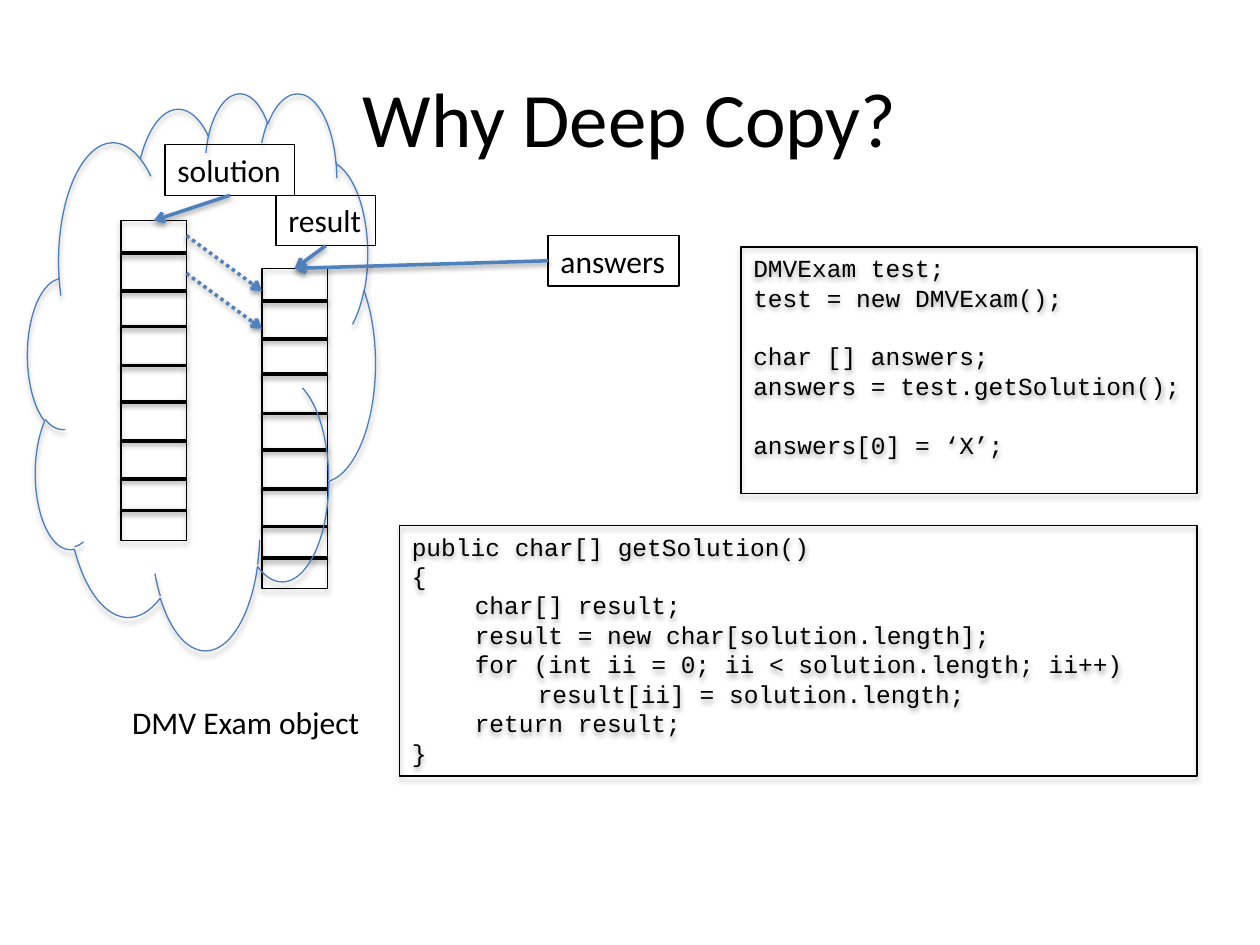
"""Build a slide showing how a deep copy separates two arrays."""
from dataclasses import dataclass

from pptx import Presentation
from pptx import util as u
from pptx.dml.color import RGBColor
from pptx.enum import dml, shapes, text
from pptx.oxml import parse_xml
from pptx.oxml.ns import nsdecls


@dataclass(frozen=True)
class Theme:
    ink: RGBColor = RGBColor(0, 0, 0)
    cloud: RGBColor = RGBColor.from_string("4B7EBC")
    arrow: RGBColor = RGBColor.from_string("4F81BD")
    body_font: str = "Calibri"
    code_font: str = "Courier New"
    title_size: u.Pt = u.Pt(44)
    label_size: u.Pt = u.Pt(18)
    code_size: u.Pt = u.Pt(14)
    code_leading: u.Pt = u.Pt(16.8)
    outline: u.Pt = u.Pt(0.75)
    rule: u.Pt = u.Pt(2)


theme = Theme()
presentation = Presentation()
presentation.slide_width, presentation.slide_height = u.Inches(10), u.Inches(7.5)
COLUMN = presentation.slide_width / 100
ROW = presentation.slide_height / 75
SHADOW = (
    f'<a:effectLst {nsdecls("a")}><a:outerShdw blurRad="39370" dist="{{distance}}" '
    'dir="5400000" rotWithShape="0"><a:srgbClr val="000000">'
    '<a:alpha val="{alpha}"/></a:srgbClr></a:outerShdw></a:effectLst>'
)


def add_box(parent, area, kind=shapes.MSO_SHAPE.RECTANGLE, color=theme.ink, shadow=True):
    left, top, width, height = area
    shape = parent.add_shape(kind, int(left * COLUMN), int(top * ROW),
                             int(width * COLUMN), int(height * ROW))
    shape.fill.background()
    shape.line.color.rgb = color
    shape.line.width = theme.outline
    shape.shadow.inherit = False
    if shadow:
        properties = shape._element.spPr
        properties.remove(properties[-1])
        properties.append(parse_xml(SHADOW.format(distance=22860, alpha=35000)))
    return shape


def add_line(parent, start, end, color=theme.ink, arrow=False, dash=None):
    connector = parent.add_connector(
        shapes.MSO_CONNECTOR.STRAIGHT,
        int(start[0] * COLUMN), int(start[1] * ROW),
        int(end[0] * COLUMN), int(end[1] * ROW))
    connector.line.color.rgb = color
    connector.line.width = theme.rule
    if dash:
        connector.line.dash_style = dash
    if arrow:
        connector.line._get_or_add_ln().append(
            parse_xml(f'<a:tailEnd {nsdecls("a")} type="arrow"/>'))
    connector._element.spPr.append(parse_xml(SHADOW.format(distance=20320, alpha=38000)))
    return connector


slide = presentation.slides.add_slide(presentation.slide_layouts[5])
title = slide.shapes.title
placement = {"left": 5 * COLUMN, "top": 3 * ROW, "width": 90 * COLUMN, "height": 12.5 * ROW}
for name, value in placement.items():
    setattr(title, name, int(value))
title.text_frame.text = "Why Deep Copy?"
title.text_frame.vertical_anchor = text.MSO_ANCHOR.MIDDLE
title_paragraph = title.text_frame.paragraphs[0]
title_paragraph.alignment = text.PP_ALIGN.CENTER
title_format = {"name": theme.body_font, "size": theme.title_size}
for name, value in title_format.items():
    setattr(title_paragraph.font, name, value)
title_paragraph.font.color.rgb = theme.ink

arrays = {}
CELL_WIDTH, ARRAY_HEIGHT = 5.2, 25.4
DIVIDERS = (2.6, 5.6, 8.4, 11.5, 14.4, 17.5, 20.5, 23)
for name, left, top in (("solution", 9.6, 17.5), ("result", 20.8, 21.3)):
    group = slide.shapes.add_group_shape()
    arrays[name] = add_box(group.shapes, (left, top, CELL_WIDTH, ARRAY_HEIGHT))
    for divider in DIVIDERS:
        add_line(group.shapes, (left, top + divider), (left + CELL_WIDTH, top + divider))

add_box(slide.shapes, (2.2, 7.3, 27.6, 44.2), shapes.MSO_SHAPE.CLOUD, theme.cloud)

labels = {}
for wording, area, outlined in (
    ("DMV Exam object", (9.5, 55.3, 20.3, 4), False),
    ("solution", (13.1, 11.5, 10.3, 4), True),
    ("answers", (43.5, 18.7, 10.4, 4), True),
    ("result", (21.9, 15.5, 7.9, 4), True),
):
    label = add_box(slide.shapes, area, shadow=False)
    if not outlined:
        label.line.fill.background()
    frame = label.text_frame
    frame.text = wording
    frame_format = {"word_wrap": False, "auto_size": text.MSO_AUTO_SIZE.SHAPE_TO_FIT_TEXT,
                    "vertical_anchor": text.MSO_ANCHOR.TOP}
    for name, value in frame_format.items():
        setattr(frame, name, value)
    paragraph = frame.paragraphs[0]
    paragraph.alignment = text.PP_ALIGN.LEFT
    label_format = {"name": theme.body_font, "size": theme.label_size}
    for name, value in label_format.items():
        setattr(paragraph.font, name, value)
    paragraph.font.color.rgb = theme.ink
    labels[wording] = label

CALLER = (
    (0, 0, "DMVExam test;"),
    (0, 0, "test = new DMVExam();"),
    (0, 1, "char [] answers;"),
    (0, 0, "answers = test.getSolution();"),
    (0, 1, "answers[0] = ‘X’;"),
)
METHOD = (
    (0, 0, "public char[] getSolution()"),
    (0, 0, "{"),
    (1, 0, "char[] result;"),
    (1, 0, "result = new char[solution.length];"),
    (1, 0, "for (int ii = 0; ii < solution.length; ii++)"),
    (2, 0, "result[ii] = solution.length;"),
    (1, 0, "return result;"),
    (0, 0, "}"),
)
for area, code in (((58.8, 19.6, 36.2, 19.6), CALLER), ((31.7, 41.7, 63.3, 19.9), METHOD)):
    frame = add_box(slide.shapes, area).text_frame
    frame.word_wrap = True
    frame.vertical_anchor = text.MSO_ANCHOR.TOP
    frame.text = "\n".join(wording for _, _, wording in code)
    for paragraph, (level, gap, _) in zip(frame.paragraphs, code):
        paragraph_format = {"level": level, "alignment": text.PP_ALIGN.LEFT,
                            "line_spacing": theme.code_leading,
                            "space_before": gap * theme.code_leading}
        for name, value in paragraph_format.items():
            setattr(paragraph, name, value)
        code_format = {"name": theme.code_font, "size": theme.code_size}
        for name, value in code_format.items():
            setattr(paragraph.font, name, value)
        paragraph.font.color.rgb = theme.ink

for label, side, array in (("solution", 2, "solution"), ("result", 2, "result"),
                           ("answers", 1, "result")):
    pointer = add_line(slide.shapes, (0, 0), (1, 1), theme.arrow, arrow=True)
    pointer.begin_connect(labels[label], side)
    pointer.end_connect(arrays[array], 0)

for top in (18.7, 21.7):
    add_line(slide.shapes, (14.8, top), (20.8, top + 4.4), theme.arrow, arrow=True,
             dash=dml.MSO_LINE.ROUND_DOT)

presentation.save("out.pptx")
